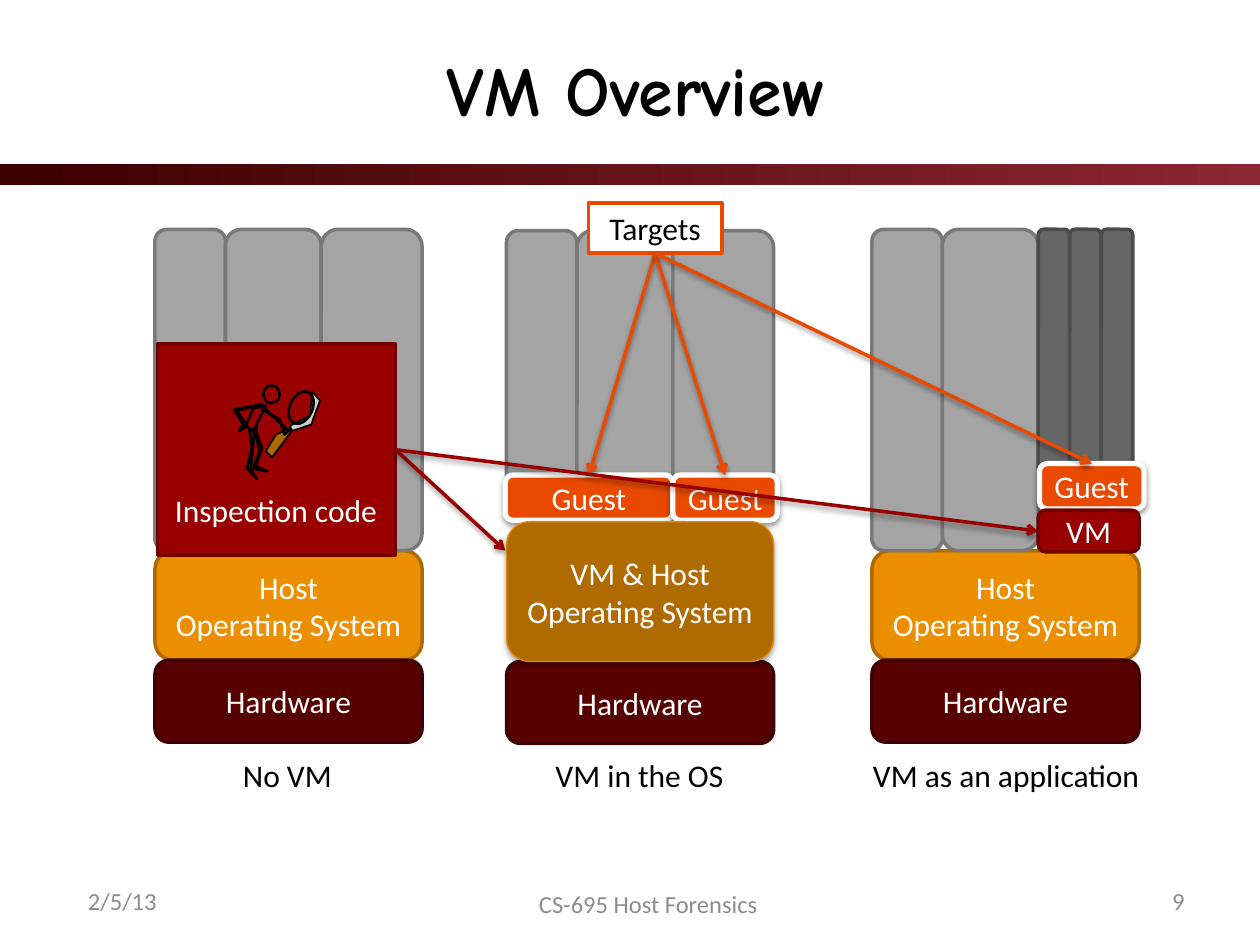
"""Build the VM Overview slide."""
from dataclasses import dataclass
from itertools import pairwise
from typing import Optional

from lxml.etree import SubElement
from pptx import Presentation
from pptx.dml.color import RGBColor
from pptx.enum.shapes import MSO_CONNECTOR, MSO_SHAPE
from pptx.enum.text import MSO_ANCHOR, PP_ALIGN
from pptx.oxml.ns import qn
from pptx.util import Pt

PX = 9144
BLACK = RGBColor.from_string("000000")
WHITE = RGBColor.from_string("FFFFFF")
FOOTER_GRAY = RGBColor.from_string("8C8C8C")
BAR_DARK = RGBColor.from_string("3C0000")
BAR_LIGHT = RGBColor.from_string("8C2633")
ORANGE = RGBColor.from_string("E94A00")
RED = RGBColor.from_string("990000")
DARK_RED = RGBColor.from_string("710000")
HANDLE = RGBColor.from_string("AD6900")
RIM = RGBColor.from_string("CECECE")


@dataclass(frozen=True)
class Shadow:
    alpha: int
    dist: float


@dataclass(frozen=True)
class Style:
    fill: Optional[RGBColor]
    line: RGBColor
    width: float = 2
    shadow: Optional[Shadow] = None
    font: RGBColor = WHITE
    preset: MSO_SHAPE = MSO_SHAPE.ROUNDED_RECTANGLE


@dataclass(frozen=True)
class Label:
    x: int
    y: int
    w: int
    text: str
    size: int = 18
    color: RGBColor = BLACK
    align: PP_ALIGN = PP_ALIGN.LEFT
    anchor: MSO_ANCHOR = MSO_ANCHOR.TOP
    font: str = "Calibri"
    bold: bool = False
    wrap: bool = False
    h: int = 40


@dataclass(frozen=True)
class Outline:
    points: tuple
    fill: Optional[RGBColor] = None


SOFT = Shadow(38, 1.6)
APP = Style(RGBColor.from_string("A4A4A4"), RGBColor.from_string("797979"))
VM_APP = Style(RGBColor.from_string("666666"), RGBColor.from_string("4B4B4B"))
HARDWARE = Style(RGBColor.from_string("580101"), RGBColor.from_string("410101"))
HOST = Style(RGBColor.from_string("EB8F00"), RGBColor.from_string("AE6A00"))
VM_HOST = Style(RGBColor.from_string("B06B00"), RGBColor.from_string("E68C00"), 0.75, Shadow(35, 1.8))
GUEST = Style(ORANGE, WHITE, 3, SOFT)
VM = Style(RED, DARK_RED)
INSPECTION = Style(RED, DARK_RED, preset=MSO_SHAPE.RECTANGLE)
TARGETS = Style(WHITE, ORANGE, font=BLACK, preset=MSO_SHAPE.RECTANGLE)
INK = Style(None, BLACK, 1.5, preset=MSO_SHAPE.OVAL)

MID, CENTER = MSO_ANCHOR.MIDDLE, PP_ALIGN.CENTER
LABELS = (
    Label(60, 695, 183, "2/5/13", 14, FOOTER_GRAY, anchor=MID, wrap=True),
    Label(390, 697, 249, "CS-695 Host Forensics", 14, FOOTER_GRAY, CENTER, MID, wrap=True),
    Label(767, 695, 183, "9", 14, FOOTER_GRAY, PP_ALIGN.RIGHT, MID, wrap=True),
    Label(60, 15, 890, "VM Overview", 40, BLACK, CENTER, MID, "Comic Neue", True, True, 110),
    Label(431, 595, 155, "VM in the OS"),
    Label(683, 595, 234, "VM as an application"),
    Label(183, 595, 92, "No VM"),
)

DETECTIVE = (
    Outline(((230, 340), (231, 343), (216, 363), (211, 358), (219, 345)), HANDLE),
    Outline(((248, 311), (254, 318), (247, 337), (232, 342), (230, 338), (246, 330)), RIM),
    Outline(((201, 324), (211, 322), (204, 336), (203, 344), (195, 338))),
    Outline(((208, 321), (188, 326), (196, 338), (190, 342), (193, 337), (186, 325))),
    Outline(((209, 323), (229, 342), (226, 345), (222, 333), (208, 325))),
    Outline(((202, 339), (208, 356), (203, 370), (212, 374), (201, 372), (206, 358))),
    Outline(((198, 341), (202, 341), (199, 373), (204, 380), (196, 372), (200, 355))),
)


def cast_shadow(effects, shadow: Shadow) -> None:
    outer = SubElement(effects, qn("a:outerShdw"), blurRad=str(Pt(3.1)), dist=str(Pt(shadow.dist)),
                       dir="5400000", rotWithShape="0")
    color = SubElement(outer, qn("a:srgbClr"), val=str(BLACK))
    SubElement(color, qn("a:alpha"), val=str(shadow.alpha * 1000))


def write(tf, text: str, size: int, color: RGBColor, align: PP_ALIGN, font="Calibri", bold=False):
    tf.text = text
    for p in tf.paragraphs:
        p.alignment = align
        for r in p.runs:
            r.font.name, r.font.size, r.font.bold = font, Pt(size), bold
            r.font.color.rgb = color


def add_label(s, label: Label) -> None:
    tf = s.shapes.add_textbox(*(v * PX for v in (label.x, label.y, label.w, label.h))).text_frame
    tf.word_wrap, tf.vertical_anchor = label.wrap, label.anchor
    write(tf, label.text, label.size, label.color, label.align, label.font, label.bold)


def paint(sp, fill: Optional[RGBColor], line: RGBColor, width: float) -> None:
    sp.shadow.inherit = False
    if fill is None:
        sp.fill.background()
    else:
        sp.fill.solid()
        sp.fill.fore_color.rgb = fill
    sp.line.color.rgb, sp.line.width = line, Pt(width)


def add_box(s, style: Style, x: int, y: int, w: int, h: int, text: str = ""):
    sp = s.shapes.add_shape(style.preset, x * PX, y * PX, w * PX, h * PX)
    paint(sp, style.fill, style.line, style.width)
    if style.shadow:
        cast_shadow(sp._element.spPr.find(qn("a:effectLst")), style.shadow)
    if text:
        sp.text_frame.word_wrap = False
        sp.text_frame.vertical_anchor = MID
        write(sp.text_frame, text, 18, style.font, CENTER)
    return sp


def add_columns(s, style: Style, edges: tuple, y: int, h: int) -> None:
    for left, right in pairwise(edges):
        add_box(s, style, left, y, right - left, h)


def add_detective(s) -> None:
    for outline in DETECTIVE:
        first, *rest = outline.points
        builder = s.shapes.build_freeform(*first, scale=PX)
        builder.add_line_segments(rest, close=True)
        paint(builder.convert_to_shape(), outline.fill, BLACK, 1 if outline.fill else 1.5)
    add_box(s, INK, 209, 306, 13, 14)
    add_box(s, INK, 230, 310, 18, 27).rotation = 25


def add_arrow(s, color: RGBColor, source, site: int, end: tuple, target=None, target_site=0):
    cx = s.shapes.add_connector(MSO_CONNECTOR.STRAIGHT, 0, 0, end[0] * PX, end[1] * PX)
    cx.begin_connect(source, site)
    if target is not None:
        cx.end_connect(target, target_site)
    cx.line.color.rgb, cx.line.width = color, Pt(2)
    props = cx._element.spPr
    SubElement(props.find(qn("a:ln")), qn("a:tailEnd"), type="arrow")
    cast_shadow(SubElement(props, qn("a:effectLst")), SOFT)


def main() -> None:
    prs = Presentation()
    prs.slide_width, prs.slide_height = 1000 * PX, 750 * PX
    s = prs.slides.add_slide(prs.slide_layouts[6])

    bar = s.shapes.add_shape(MSO_SHAPE.RECTANGLE, 0, 130 * PX, 1000 * PX, 17 * PX)
    bar.shadow.inherit = False
    bar.line.fill.background()
    bar.fill.gradient()
    bar.fill.gradient_angle = 0
    for stop, color in zip(bar.fill.gradient_stops, (BAR_DARK, BAR_LIGHT)):
        stop.color.rgb = color
    for label in LABELS:
        add_label(s, label)

    add_columns(s, APP, (402, 458, 534, 614), 183, 218)
    add_box(s, HARDWARE, 402, 525, 212, 65, "Hardware")
    guests = [add_box(s, GUEST, x, 377, w, 36, "Guest") for x, w in ((401, 133), (534, 83))]
    add_box(s, VM_HOST, 402, 414, 212, 111, "VM & Host\nOperating System")

    for x, edges in ((692, (692, 748, 824)), (123, (123, 179, 255, 335))):
        add_box(s, HOST, x, 437, 212, 87, "Host\nOperating System")
        add_columns(s, APP, edges, 182, 255)
        add_box(s, HARDWARE, x, 524, 212, 65, "Hardware")
    add_columns(s, VM_APP, tuple(range(824, 900, 25)), 182, 194)
    guests.append(add_box(s, GUEST, 825, 368, 83, 36, "Guest"))
    vm = add_box(s, VM, 824, 405, 80, 33, "VM")

    targets = add_box(s, TARGETS, 467, 161, 106, 40, "Targets")
    for guest in guests:
        add_arrow(s, ORANGE, targets, 2, (0, 0), guest)

    inspection = add_box(s, INSPECTION, 125, 273, 189, 168)
    add_detective(s)
    add_label(s, Label(129, 385, 183, "Inspection code", color=WHITE))
    add_arrow(s, RED, inspection, 3, (401, 437))
    add_arrow(s, RED, inspection, 3, (0, 0), vm, 1)
    prs.save("out.pptx")


if __name__ == "__main__":
    main()
